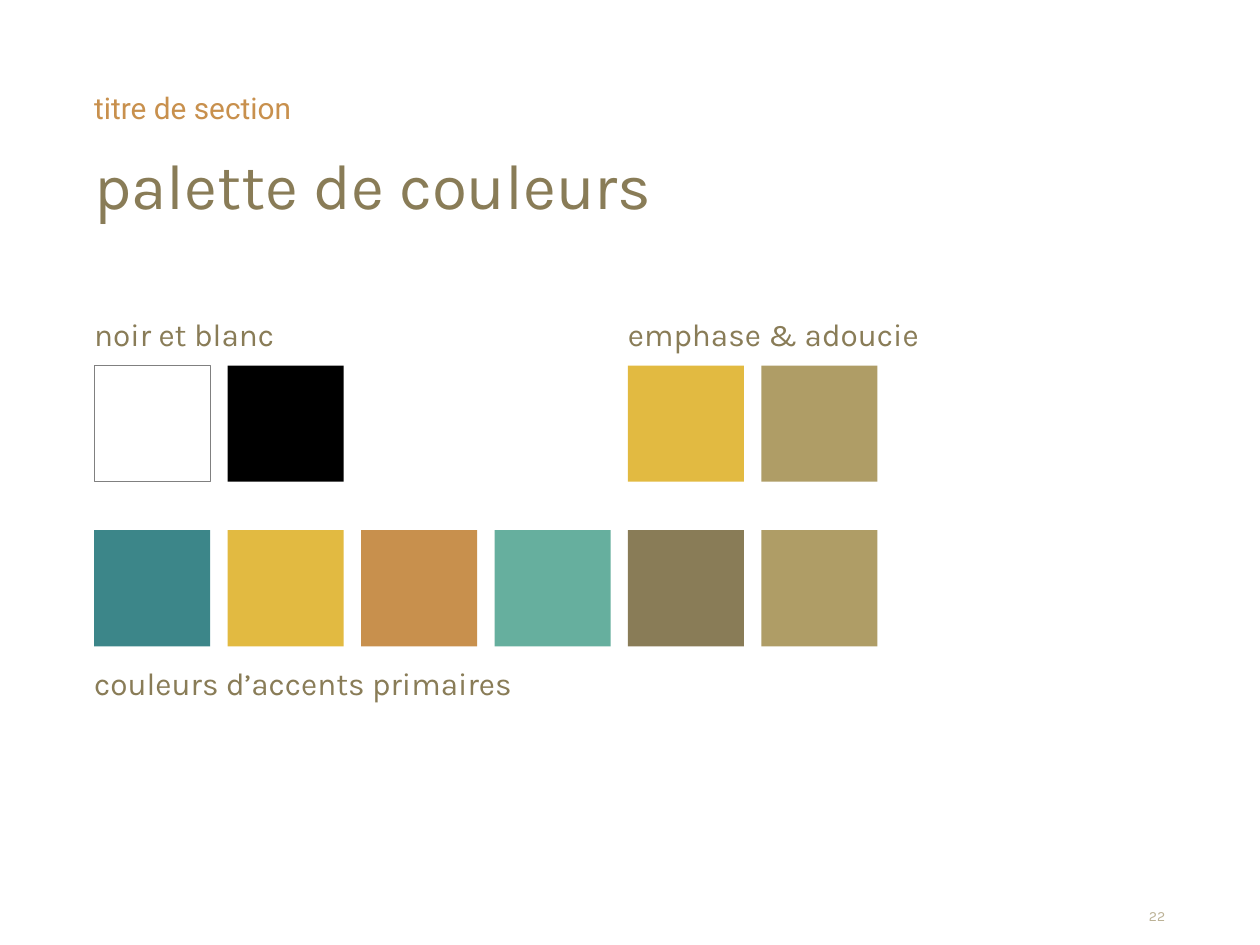
from pptx import Presentation
from pptx.dml.color import RGBColor as RGB
from pptx.enum.shapes import MSO_SHAPE as Shape
from pptx.enum.text import MSO_ANCHOR as Anchor, PP_ALIGN as Align
from pptx.util import Cm, Pt

COLORS = {
    "white": "FFFFFF", "black": "000000", "outline": "808080",
    "teal": "3C8689", "yellow": "E2BA41", "orange": "C8904D",
    "mint": "66AF9E", "olive": "897C57", "sand": "AF9D66", "pale": "BCB296",
}
LEFT, SWATCH, PITCH = 1.9, 2.34, 2.69
RIGHT_GROUP = LEFT + 4 * PITCH

STYLES = {
    "title": {"name": "Karla", "size": 36.5, "color": "olive", "spacing": 0.85},
    "section": {"name": "Roboto", "size": 17, "color": "orange", "spacing": 0.85},
    "label": {"name": "Karla", "size": 18, "color": "olive", "spacing": 1.2},
    "number": {"name": "Karla", "size": 8, "color": "pale", "spacing": 1.0,
               "align": Align.RIGHT, "anchor": Anchor.BOTTOM},
}
TEXTS = [
    ("22", "number", 22.68, 18.31, 0.81, 0.33),
    ("palette de couleurs", "title", LEFT, 3.18, 21.59, 2.54),
    ("titre de section", "section", LEFT, 1.93, 21.59, 1.24),
    ("noir et blanc", "label", LEFT, 6.2, 5.03, 0.84),
    ("emphase & adoucie", "label", RIGHT_GROUP, 6.2, 6.15, 0.84),
    ("couleurs d’accents primaires", "label", LEFT, 13.23, 15.77, 0.84),
]
SWATCH_ROWS = [
    (7.37, 0, ["white", "black"]),
    (7.37, 4, ["yellow", "sand"]),
    (10.69, 0, ["teal", "yellow", "orange", "mint", "olive", "sand"]),
]


def color(name):
    return RGB.from_string(COLORS[name])


def set_attributes(target, values):
    for attribute, value in values.items():
        setattr(target, attribute, value)


def add_text(slide, text, style_name, *box):
    style = STYLES[style_name]
    frame = slide.shapes.add_textbox(*map(Cm, box)).text_frame
    set_attributes(frame, {
        "margin_left": 0, "margin_right": 0, "margin_top": 0, "margin_bottom": 0,
        "word_wrap": True, "vertical_anchor": style.get("anchor", Anchor.TOP),
    })
    paragraph = frame.paragraphs[0]
    set_attributes(paragraph, {
        "line_spacing": style["spacing"],
        "alignment": style.get("align", Align.LEFT),
    })
    run = paragraph.add_run()
    run.text = text
    set_attributes(run.font, {"name": style["name"], "size": Pt(style["size"])})
    run.font.color.rgb = color(style["color"])


def add_swatch(slide, column, top, name):
    box = (LEFT + column * PITCH, top, SWATCH, SWATCH)
    shape = slide.shapes.add_shape(Shape.RECTANGLE, *map(Cm, box))
    shape.shadow.inherit = False
    shape.fill.solid()
    shape.fill.fore_color.rgb = color(name)
    if name == "white":
        shape.line.color.rgb = color("outline")
        shape.line.width = Pt(0.25)
    else:
        shape.line.fill.background()


def main():
    presentation = Presentation()
    set_attributes(presentation, {"slide_width": Cm(25.4), "slide_height": Cm(19.05)})
    slide = presentation.slides.add_slide(presentation.slide_layouts[6])
    for text in TEXTS:
        add_text(slide, *text)
    for top, first_column, names in SWATCH_ROWS:
        for column, name in enumerate(names, first_column):
            add_swatch(slide, column, top, name)
    presentation.save("out.pptx")


if __name__ == "__main__":
    main()
